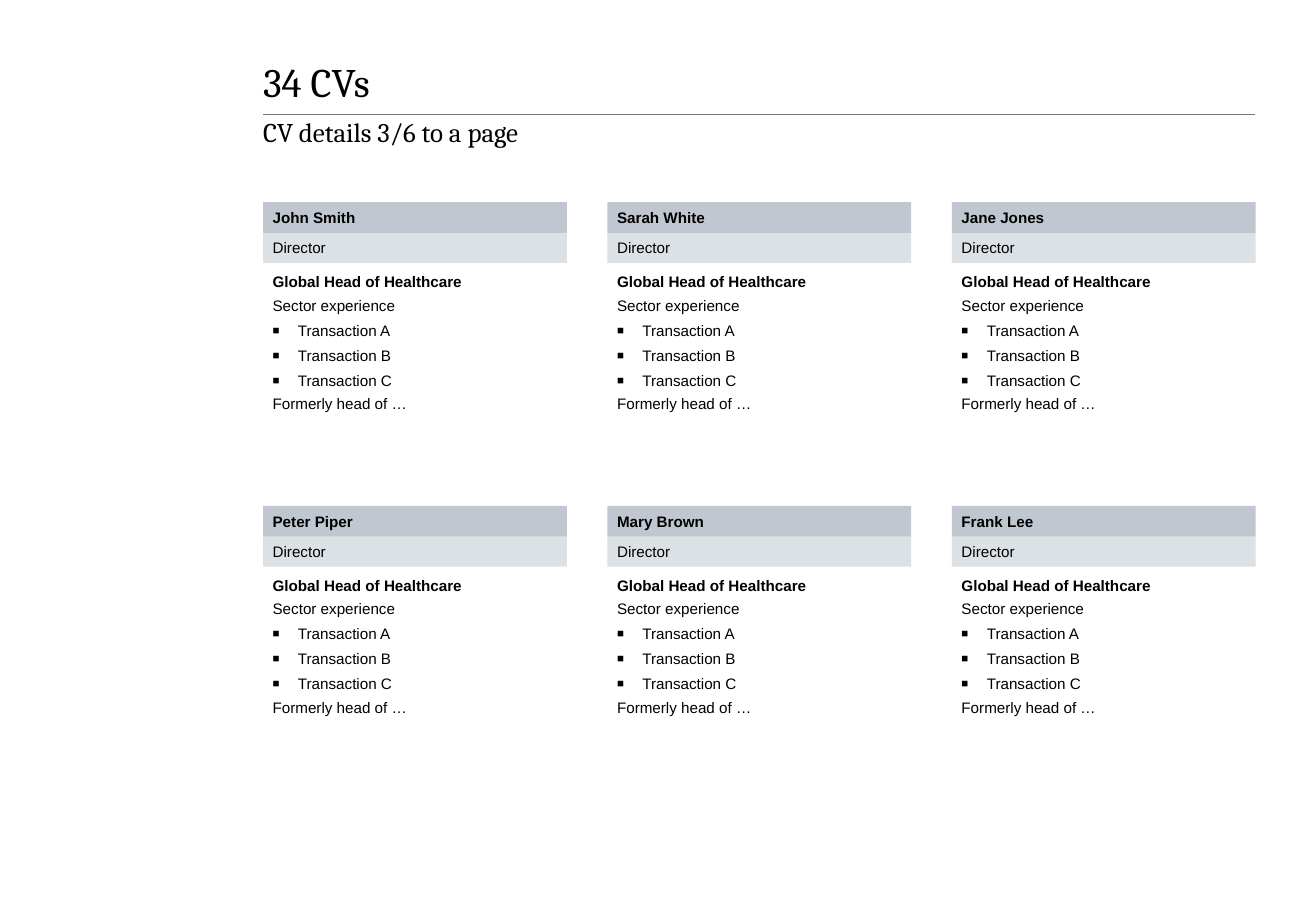
from dataclasses import dataclass

from lxml.etree import SubElement
from pptx import Presentation
from pptx.dml.color import RGBColor
from pptx.enum.shapes import MSO_CONNECTOR as CONN, MSO_SHAPE as SHAPE
from pptx.enum.text import MSO_ANCHOR as ANCHOR, MSO_AUTO_SIZE as AUTO, PP_ALIGN as ALIGN
from pptx.oxml.ns import qn
from pptx.shapes.autoshape import Shape
from pptx.slide import Slide
from pptx.util import Cm, Pt

BLACK = RGBColor(0x00, 0x00, 0x00)
RULE_GREY = RGBColor(0x78, 0x78, 0x78)
NAME_FILL = RGBColor(0xC1, 0xC7, 0xD0)
ROLE_FILL = RGBColor(0xDB, 0xE1, 0xE5)

LEFT, CONTENT_W = 5.5, 20.74
CARD_TOP, CARD_W = 4.23, 6.35
COL_STEP, ROW_STEP = 7.2, 6.35
BAR_H, ROLE_DY, BODY_DY, BODY_H = 0.64, 0.63, 1.27, 3.38
INSET, BULLET_INDENT = 0.2, 0.53

TITLE_FONT = {"name": "Cambria", "size": Pt(24)}
SUBTITLE_FONT = {"name": "Cambria", "size": Pt(16)}
PLAIN_FONT = {"name": "Arial", "size": Pt(9), "bold": False}
BOLD_FONT = PLAIN_FONT | {"bold": True}
CARD_FRAME = {
    "margin_left": Cm(INSET), "margin_top": Cm(INSET),
    "margin_right": Cm(INSET), "margin_bottom": Cm(INSET), "word_wrap": True,
}
BAR_FRAME = CARD_FRAME | {"vertical_anchor": ANCHOR.MIDDLE}
BODY_FRAME = CARD_FRAME | {"vertical_anchor": ANCHOR.TOP, "auto_size": AUTO.SHAPE_TO_FIT_TEXT}
HEADING_FRAME = {
    "margin_left": 0, "margin_top": 0, "margin_right": 0,
    "margin_bottom": Cm(0.3), "word_wrap": True,
}


@dataclass(frozen=True)
class Line:
    text: str
    font: dict
    space_before: float = 0
    bullet: bool = False


@dataclass(frozen=True)
class Card:
    name: str
    role: str
    details: tuple[Line, ...]


DETAILS = (
    Line("Global Head of Healthcare", BOLD_FONT),
    Line("Sector experience", PLAIN_FONT, 3.1),
    Line("Transaction A", PLAIN_FONT, 4, True),
    Line("Transaction B", PLAIN_FONT, 4, True),
    Line("Transaction C", PLAIN_FONT, 4, True),
    Line("Formerly head of …", PLAIN_FONT, 3.1),
)
NAMES = ("John Smith", "Sarah White", "Jane Jones", "Peter Piper", "Mary Brown", "Frank Lee")
CARDS = [Card(name, "Director", DETAILS) for name in NAMES]


def apply(target: object, values: dict) -> None:
    for key, value in values.items():
        setattr(target, key, value)


def write(sp: Shape, frame: dict, lines: tuple[Line, ...]) -> None:
    tf = sp.text_frame
    apply(tf, frame)
    for i, line in enumerate(lines):
        p = tf.add_paragraph() if i else tf.paragraphs[0]
        if line.bullet:
            p.level = 1
            pPr = p._p.get_or_add_pPr()
            pPr.set("marL", str(Cm(BULLET_INDENT)))
            pPr.set("indent", str(-Cm(BULLET_INDENT)))
            SubElement(pPr, qn("a:buSzPct"), val="75000")
            SubElement(pPr, qn("a:buFont"), typeface="Arial")
            SubElement(pPr, qn("a:buChar"), char="■")
        p.alignment = ALIGN.LEFT
        if line.space_before:
            p.space_before = Pt(line.space_before)
        r = p.add_run()
        r.text = line.text
        apply(r.font, line.font)
        r.font.color.rgb = BLACK


def add_text(s: Slide, x: float, y: float, w: float, h: float,
             frame: dict, *lines: Line) -> None:
    write(s.shapes.add_textbox(Cm(x), Cm(y), Cm(w), Cm(h)), frame, lines)


def add_bar(s: Slide, x: float, y: float, fill: RGBColor, line: Line) -> None:
    sp = s.shapes.add_shape(SHAPE.RECTANGLE, Cm(x), Cm(y), Cm(CARD_W), Cm(BAR_H))
    sp.shadow.inherit = False
    sp.fill.solid()
    sp.fill.fore_color.rgb = fill
    sp.line.fill.background()
    write(sp, BAR_FRAME, (line,))


def add_card(s: Slide, x: float, y: float, card: Card) -> None:
    add_text(s, x, y + BODY_DY, CARD_W, BODY_H, BODY_FRAME, *card.details)
    add_bar(s, x, y + ROLE_DY, ROLE_FILL, Line(card.role, PLAIN_FONT))
    add_bar(s, x, y, NAME_FILL, Line(card.name, BOLD_FONT))


def add_heading(s: Slide) -> None:
    rule = s.shapes.add_connector(CONN.STRAIGHT, Cm(LEFT), Cm(2.39), Cm(LEFT + CONTENT_W), Cm(2.39))
    SubElement(rule._element.spPr, qn("a:effectLst"))
    rule.line.color.rgb = RULE_GREY
    rule.line.width = Pt(0.5)
    add_text(s, LEFT, 1.35, CONTENT_W, 0.99, HEADING_FRAME | {"vertical_anchor": ANCHOR.MIDDLE},
             Line("34 CVs", TITLE_FONT))
    add_text(s, LEFT, 2.41, CONTENT_W, 0.89, HEADING_FRAME,
             Line("CV details 3/6 to a page", SUBTITLE_FONT))


def main() -> None:
    prs = Presentation()
    prs.slide_width, prs.slide_height = Cm(27.51), Cm(19.05)
    s = prs.slides.add_slide(prs.slide_layouts[6])
    add_heading(s)
    for i, card in enumerate(CARDS):
        row, col = divmod(i, 3)
        add_card(s, LEFT + col * COL_STEP, CARD_TOP + row * ROW_STEP, card)
    prs.save("out.pptx")


if __name__ == "__main__":
    main()
